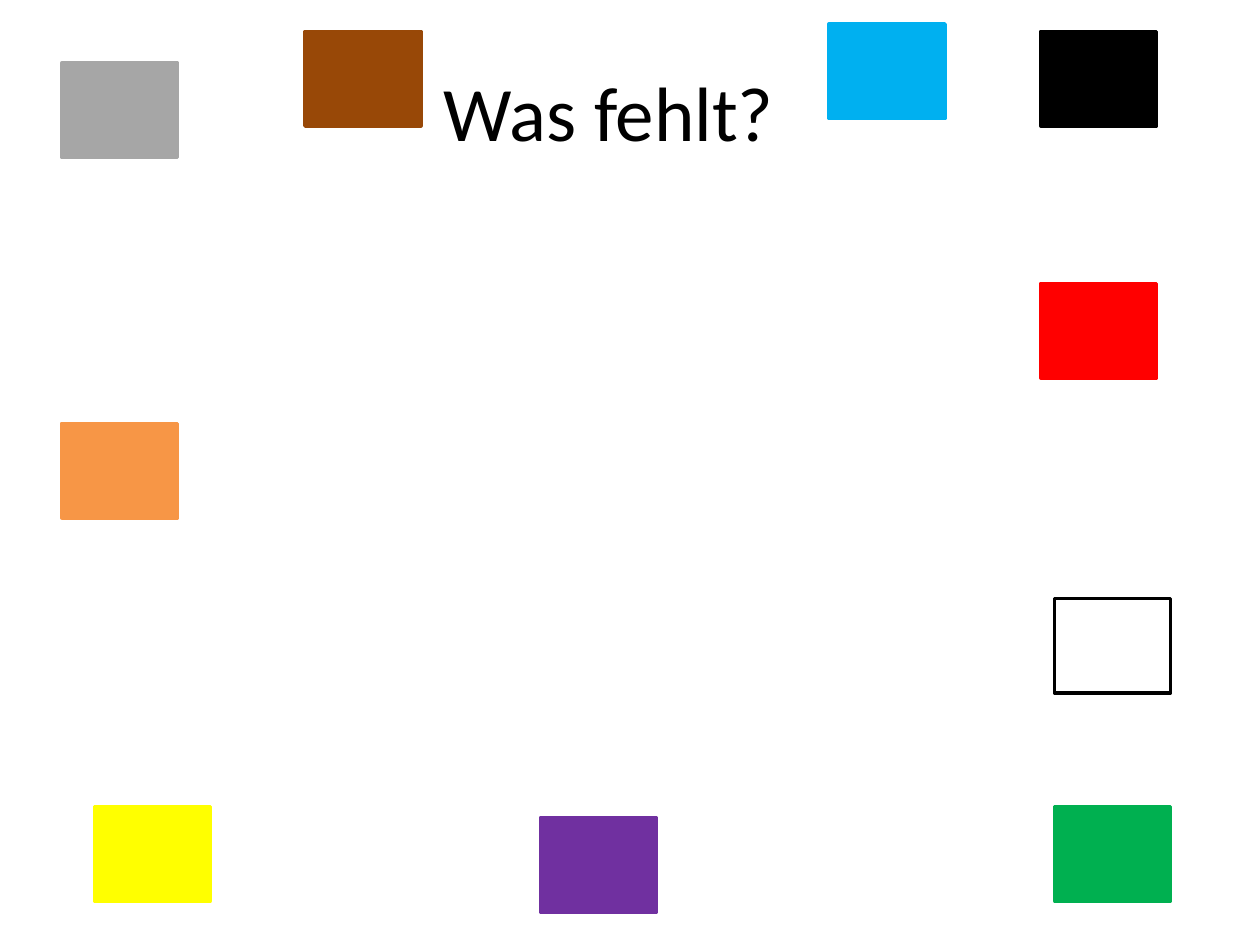
from pptx import Presentation
from pptx.dml.color import RGBColor
from pptx.enum.shapes import MSO_SHAPE
from pptx.enum.text import MSO_ANCHOR, PP_ALIGN
from pptx.util import Pt

RECTANGLE = MSO_SHAPE.RECTANGLE
MIDDLE = MSO_ANCHOR.MIDDLE
CENTER = PP_ALIGN.CENTER

CARD_WIDTH, CARD_HEIGHT = 66.24, 54
CARDS_BEHIND_TITLE = [
    (473.76, 13.68, "00B0F0", "00B0F0"),
    (602.64, 460.8, "00B050", "00B050"),
    (594.72, 162, "FF0000", "FF0000"),
    (35.28, 241.92, "F79646", "F79646"),
    (308.88, 467.28, "7030A0", "7030A0"),
    (174.24, 18, "984807", "984807"),
    (602.64, 342, "FFFFFF", "000000"),
    (594.72, 18, "000000", "000000"),
    (35.28, 36, "A6A6A6", "A6A6A6"),
]
YELLOW_CARD = (54, 460.8, "FFFF00", "FFFF00")


def color(value):
    """Return the colour for a hex string."""
    return RGBColor.from_string(value)


def add_card(slide, left, top, fill, line):
    """Place one colour card at the given corner."""
    card = slide.shapes.add_shape(
        RECTANGLE, Pt(left), Pt(top), Pt(CARD_WIDTH), Pt(CARD_HEIGHT))
    card.shadow.inherit = False
    card.fill.solid()
    card.fill.fore_color.rgb = color(fill)
    card.line.color.rgb = color(line)
    card.line.width = Pt(2)


def add_title(slide, left, top, width, height, text):
    """Place the centred question in the given box."""
    title = slide.shapes.add_textbox(Pt(left), Pt(top), Pt(width), Pt(height))
    frame = title.text_frame
    frame.word_wrap = True
    frame.vertical_anchor = MIDDLE
    paragraph = frame.paragraphs[0]
    paragraph.text = text
    paragraph.alignment = CENTER
    paragraph.font.name = "Calibri"
    paragraph.font.size = Pt(44)
    paragraph.font.color.rgb = color("000000")


def main():
    """Build the colour card slide and save it."""
    presentation = Presentation()
    presentation.slide_width, presentation.slide_height = Pt(720), Pt(540)
    slide = presentation.slides.add_slide(presentation.slide_layouts[6])
    for card in CARDS_BEHIND_TITLE:
        add_card(slide, *card)
    add_title(slide, 120, 18, 456, 90, "Was fehlt?")
    add_card(slide, *YELLOW_CARD)
    presentation.save("out.pptx")


if __name__ == "__main__":
    main()
